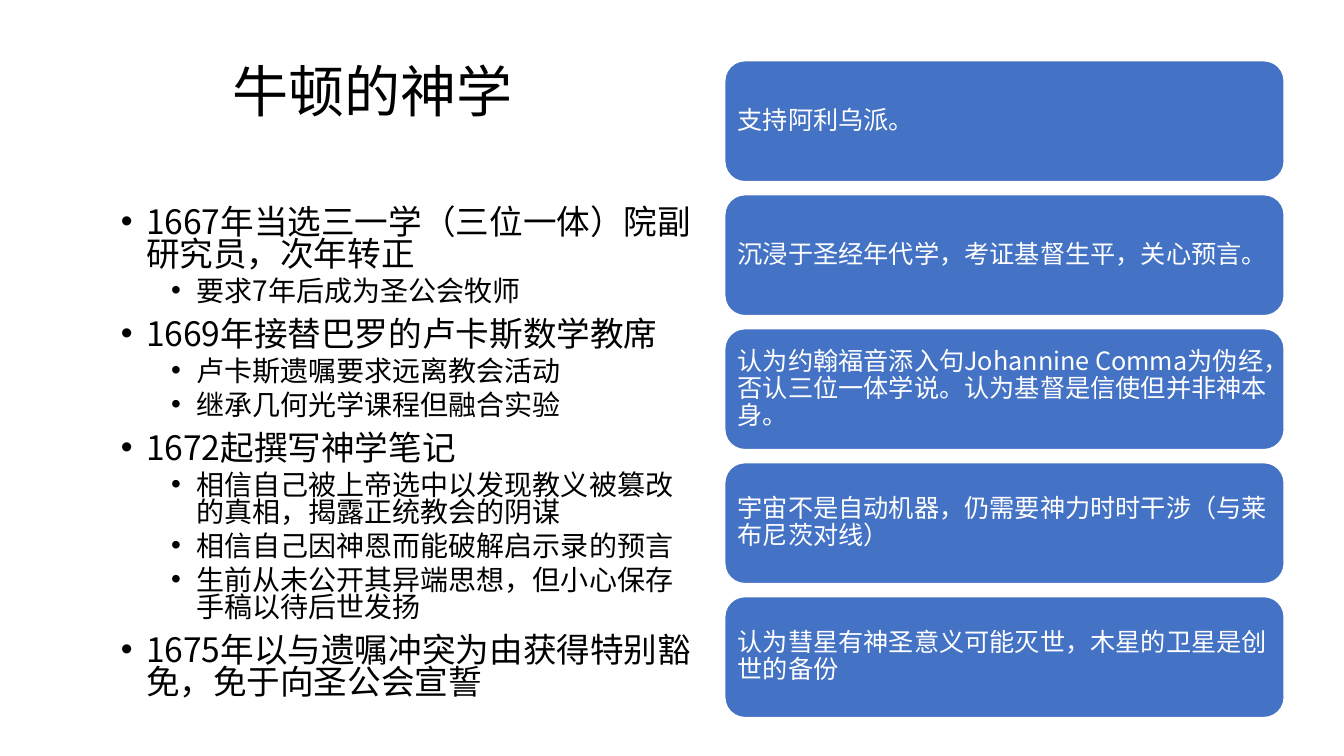
from dataclasses import dataclass

from lxml import etree
from pptx import Presentation
from pptx.dml.color import RGBColor
from pptx.enum.shapes import MSO_SHAPE
from pptx.enum.text import MSO_ANCHOR, PP_ALIGN
from pptx.oxml.ns import qn
from pptx.util import Pt

ROUNDED = MSO_SHAPE.ROUNDED_RECTANGLE
MIDDLE = MSO_ANCHOR.MIDDLE
LEFT = PP_ALIGN.LEFT
FONT = "Noto Sans CJK SC"
COLORS = {"text": "000000", "card": "4472C4", "white": "FFFFFF"}

CARD_LEFT, CARD_TOP = 517.7, 43.4
CARD_WIDTH, CARD_HEIGHT, CARD_PITCH = 399.6, 86.4, 95.7
CARD_INSET = 5.04


@dataclass(frozen=True)
class Level:
    size: float
    margin: float
    space_before: float


@dataclass(frozen=True)
class Point:
    text: str
    level: int = 0


LEVELS = [Level(24, 18, 10), Level(20, 54, 5)]
HANGING = 18

POINTS = [
    Point("1667年当选三一学（三位一体）院副研究员，次年转正"),
    Point("要求7年后成为圣公会牧师", 1),
    Point("1669年接替巴罗的卢卡斯数学教席"),
    Point("卢卡斯遗嘱要求远离教会活动", 1),
    Point("继承几何光学课程但融合实验", 1),
    Point("1672起撰写神学笔记"),
    Point("相信自己被上帝选中以发现教义被篡改的真相，揭露正统教会的阴谋", 1),
    Point("相信自己因神恩而能破解启示录的预言", 1),
    Point("生前从未公开其异端思想，但小心保存手稿以待后世发扬", 1),
    Point("1675年以与遗嘱冲突为由获得特别豁免，免于向圣公会宣誓"),
]

CARDS = [
    "支持阿利乌派。",
    "沉浸于圣经年代学，考证基督生平，关心预言。",
    "认为约翰福音添入句Johannine Comma为伪经，否认三位一体学说。认为基督是信使但并非神本身。",
    "宇宙不是自动机器，仍需要神力时时干涉（与莱布尼茨对线）",
    "认为彗星有神圣意义可能灭世，木星的卫星是创世的备份",
]


def color(name: str) -> RGBColor:
    return RGBColor.from_string(COLORS[name])


def write(paragraph, text: str, size: float, color_name: str, spacing: float) -> None:
    run = paragraph.add_run()
    run.text = text
    paragraph.alignment = LEFT
    paragraph.line_spacing = spacing
    paragraph.font.size = Pt(size)
    paragraph.font.name = FONT
    paragraph.font.color.rgb = color(color_name)
    east_asian = etree.SubElement(run.font._element, qn("a:ea"))
    east_asian.set("typeface", FONT)


def add_bullet(paragraph, level: Level) -> None:
    properties = paragraph._p.get_or_add_pPr()
    properties.set("marL", str(Pt(level.margin)))
    properties.set("indent", str(Pt(-HANGING)))
    font = etree.Element(qn("a:buFont"), typeface="Arial")
    bullet = etree.Element(qn("a:buChar"), char="•")
    defaults = properties.find(qn("a:defRPr"))
    defaults.addprevious(font)
    defaults.addprevious(bullet)


def add_text_frame(slide, left: float, top: float, width: float, height: float):
    box = slide.shapes.add_textbox(Pt(left), Pt(top), Pt(width), Pt(height))
    box.text_frame.word_wrap = True
    return box.text_frame


def add_title(slide) -> None:
    frame = add_text_frame(slide, 159.1, 42.5, 707.8, 87.8)
    write(frame.paragraphs[0], "牛顿的神学", 40, "text", 0.9)


def add_points(slide, points: list[Point]) -> None:
    frame = add_text_frame(slide, 79.2, 145.4, 425.5, 360.7)
    for index, point in enumerate(points):
        paragraph = frame.add_paragraph() if index else frame.paragraphs[0]
        level = LEVELS[point.level]
        write(paragraph, point.text, level.size, "text", 0.8)
        paragraph.level = point.level
        paragraph.space_before = Pt(level.space_before)
        add_bullet(paragraph, level)


def add_card(slide, text: str, top: float) -> None:
    card = slide.shapes.add_shape(
        ROUNDED, Pt(CARD_LEFT), Pt(top), Pt(CARD_WIDTH), Pt(CARD_HEIGHT)
    )
    card.shadow.inherit = False
    card.fill.solid()
    card.fill.fore_color.rgb = color("card")
    card.line.color.rgb = color("white")
    card.line.width = Pt(1)
    frame = card.text_frame
    frame.word_wrap = True
    frame.vertical_anchor = MIDDLE
    frame.margin_left = frame.margin_right = Pt(CARD_INSET)
    frame.margin_top = frame.margin_bottom = Pt(CARD_INSET)
    write(frame.paragraphs[0], text, 18, "white", 0.9)


def main() -> None:
    presentation = Presentation()
    presentation.slide_width = Pt(960)
    presentation.slide_height = Pt(540)
    slide = presentation.slides.add_slide(presentation.slide_layouts[6])
    add_title(slide)
    add_points(slide, POINTS)
    for index, text in enumerate(CARDS):
        add_card(slide, text, CARD_TOP + index * CARD_PITCH)
    presentation.save("out.pptx")


if __name__ == "__main__":
    main()
